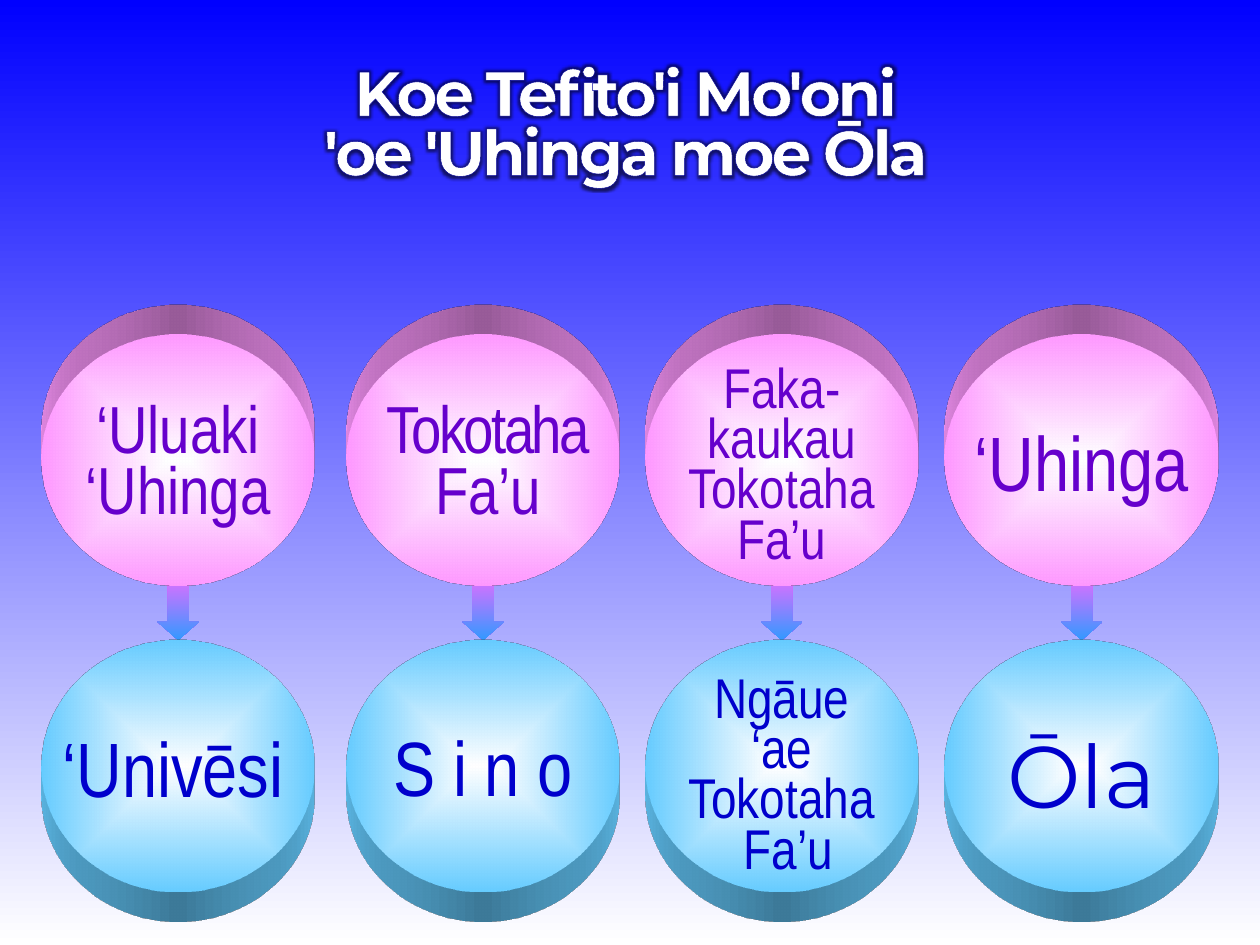
import pptx
import pptx.util
import pptx.oxml
import pptx.dml.color
import pptx.enum.shapes
import pptx.enum.text
from dataclasses import dataclass

Inch = pptx.util.Inches
Pt = pptx.util.Pt
Kind = pptx.enum.shapes.MSO_SHAPE
NS = 'xmlns:a="http://schemas.openxmlformats.org/drawingml/2006/main"'


@dataclass(frozen=True)
class Theme:
    sky: tuple = ("0000FF", "FFFFFF")
    pink: tuple = ("FFFFFF", "FF99FF")
    blue: tuple = ("FFFFFF", "66CCFF")
    arrow: tuple = ("FF66FF", "3399FF")
    white: str = "FFFFFF"
    edge: str = "000099"
    glow: str = "000000"
    violet: str = "6600CC"
    navy: str = "0000CC"
    narrow: str = "Arial Narrow"
    round: str = "Montserrat"
    head: int = 36
    small: int = 32
    mid: int = 38
    big: int = 44
    huge: int = 50


T = Theme()

# Grid: four columns of discs, two rows
LEFTS = (0.33, 2.75, 5.12, 7.5)
WIDE, HIGH = 2.17, 2
TOP, LOW = 2.65, 5.08


def rgb(code):
    return pptx.dml.color.RGBColor.from_string(code)


def xml(text):
    """Parse one drawing element; its tag is given without the prefix's URI."""
    head, rest = text.split(">", 1)
    slash = "/" if head.endswith("/") else ""
    return pptx.oxml.parse_xml(f"{head.rstrip('/')} {NS}{slash}>{rest}")


def blend(fill, pair, radial=False):
    fill.gradient()
    for stop, code in zip(fill.gradient_stops, pair):
        stop.color.rgb = rgb(code)
    fill.gradient_angle = 270
    if radial:
        line = fill._fill._gradFill.find(pptx.oxml.ns.qn("a:lin"))
        line.getparent().replace(line, xml(
            '<a:path path="shape"><a:fillToRect l="50000" t="50000" '
            'r="50000" b="50000"/></a:path>'))


def solid(parent, kind, box, pair, radial=False):
    """Add a gradient shape without line or shadow."""
    shape = parent.add_shape(kind, *map(Inch, box))
    shape.shadow.inherit = False
    shape.line.fill.background()
    blend(shape.fill, pair, radial)
    return shape


def write(frame, lines, size, face, code, gap=None, bold=None):
    """Fill a text frame with centred lines in one style."""
    for i, line in enumerate(lines):
        para = frame.paragraphs[0] if i == 0 else frame.add_paragraph()
        para.add_run().text = line
        para.alignment = pptx.enum.text.PP_ALIGN.CENTER
        para.line_spacing = gap
        font = para.font
        font.size, font.name, font.bold = Pt(size), face, bold
        font.color.rgb = rgb(code)


def title(slide, box):
    """Outlined two-line heading with a dark glow."""
    shape = slide.shapes.title
    shape.left, shape.top, shape.width, shape.height = map(Inch, box)
    frame = shape.text_frame
    frame.word_wrap = False
    frame.auto_size = pptx.enum.text.MSO_AUTO_SIZE.NONE
    frame.vertical_anchor = pptx.enum.text.MSO_ANCHOR.TOP
    write(frame, ("Koe Tefito'i Mo'oni", "'oe 'Uhinga moe Ōla"),
          T.head, T.round, T.white, Pt(34), True)
    for para in frame.paragraphs:
        props = para.runs[0].font._element
        props.set("spc", "-180")
        props.append(xml(
            f'<a:ln w="28575"><a:solidFill><a:srgbClr val="{T.edge}"/>'
            '</a:solidFill></a:ln>'))
        props.append(xml(
            f'<a:effectLst><a:glow rad="63500"><a:srgbClr val="{T.glow}">'
            '<a:alpha val="60000"/></a:srgbClr></a:glow></a:effectLst>'))


def disc(slide, box, side, pair, code, label):
    """Thick disc with its label; the rim shows on the given side."""
    left, top, wide, high = box
    lines, size, face, gap, shift, drop, tall = label
    group = slide.shapes.add_group_shape().shapes
    shape = solid(group, Kind.OVAL, box, pair, True)
    props = shape._element.spPr
    props.append(xml(
        f'<a:scene3d><a:camera prst="legacyOblique{side}"/>'
        '<a:lightRig rig="legacyFlat3" dir="b"/></a:scene3d>'))
    props.append(xml(
        '<a:sp3d extrusionH="430200" prstMaterial="legacyMatte">'
        f'<a:extrusionClr><a:srgbClr val="{pair[1]}"/></a:extrusionClr>'
        '</a:sp3d>'))
    text = group.add_textbox(Inch(left + shift), Inch(top + drop),
                             Inch(wide), Inch(tall))
    frame = text.text_frame
    frame.word_wrap = True
    frame.auto_size = pptx.enum.text.MSO_AUTO_SIZE.SHAPE_TO_FIT_TEXT
    write(frame, lines, size, face, code, gap)
    return frame


def arrow(slide, left):
    """Down arrow that joins the two discs of a column."""
    wide = 0.33
    box = (left + (WIDE - wide) / 2, 4.5, wide, LOW - 4.5)
    shape = solid(slide.shapes, Kind.DOWN_ARROW, box, T.arrow)
    shape.adjustments[0], shape.adjustments[1] = 0.5, 0.44


# Labels: lines, size, face, line spacing, shift, drop, height
UPPER = (
    (("‘Uluaki", "‘Uhinga"), T.mid, T.narrow, Pt(35), 0, 0.52, 1.08),
    (("Tokotaha", "Fa’u"), T.mid, T.narrow, Pt(35), 0.04, 0.52, 1.08),
    (("Faka-", "kaukau", "Tokotaha", "Fa’u"),
     T.small, T.narrow, 0.75, 0, 0.22, 1.72),
    (("‘Uhinga",), T.big, T.narrow, None, 0, 0.59, 0.87),
)
LOWER = (
    (("‘Univēsi",), T.big, T.narrow, None, -0.04, 0.59, 0.84),
    (("S i n o",), T.big, T.narrow, None, 0, 0.58, 0.84),
    (("Ngāue", "‘ae", "Tokotaha", " Fa’u"),
     T.small, T.narrow, 0.75, 0, 0.25, 1.72),
    (("Ōla",), T.huge, T.round, None, 0, 0.59, 0.94),
)


def main():
    deck = pptx.Presentation()
    deck.slide_width, deck.slide_height = Inch(10), Inch(7.5)
    slide = deck.slides.add_slide(deck.slide_layouts[5])
    blend(slide.background.fill, T.sky)
    title(slide, (0.33, 0.5, 9.27, 1.67))

    # Arrows lie behind the discs
    for left in LEFTS:
        arrow(slide, left)
    for left, high, low in zip(LEFTS, UPPER, LOWER):
        frame = disc(slide, (left, TOP, WIDE, HIGH), "Top",
                     T.pink, T.violet, high)
        if high is UPPER[1]:  # tighten the long word
            frame.paragraphs[0].runs[0].font._element.set("spc", "-150")
        disc(slide, (left, LOW, WIDE, HIGH), "Bottom", T.blue, T.navy, low)
    deck.save("out.pptx")


if __name__ == "__main__":
    main()
